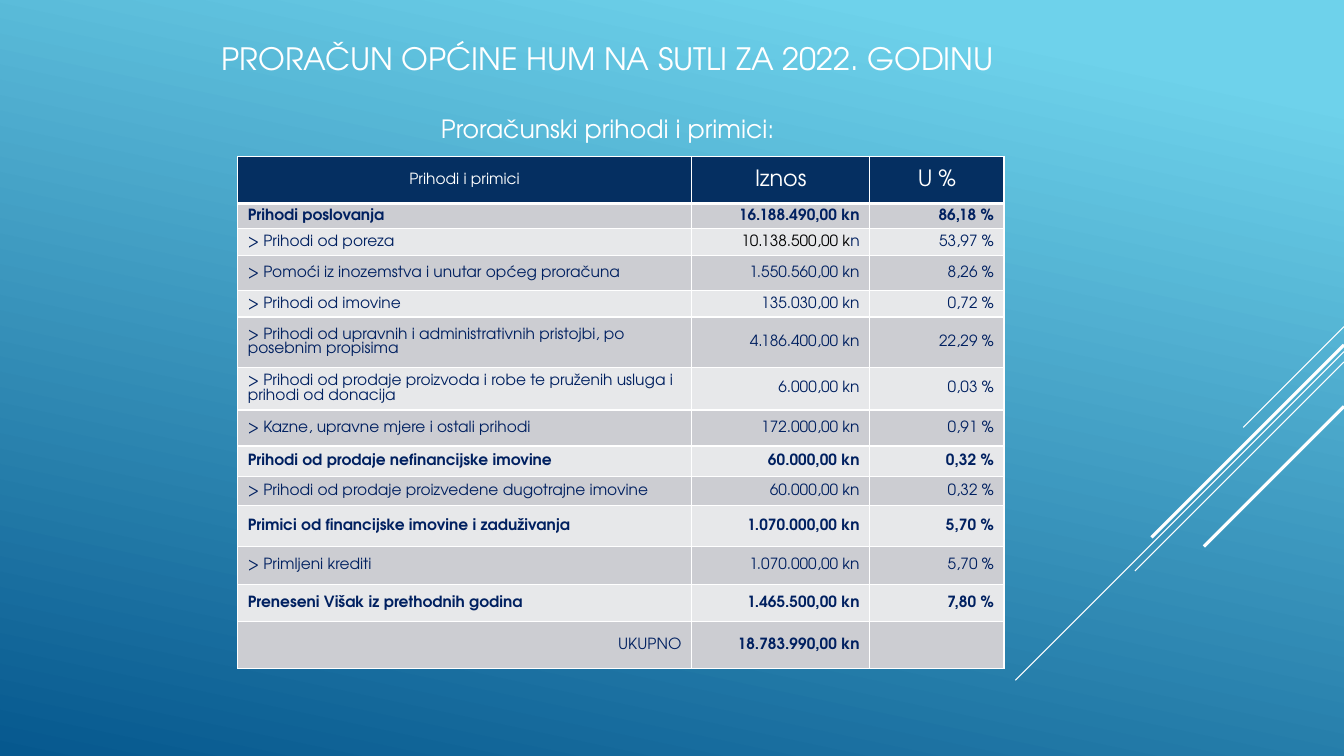
from lxml.etree import SubElement
from pptx import Presentation
from pptx.dml.color import RGBColor
from pptx.enum.shapes import MSO_CONNECTOR
from pptx.enum.text import MSO_ANCHOR, MSO_AUTO_SIZE, PP_ALIGN
from pptx.oxml.ns import qn
from pptx.util import Cm, Pt

FONT = "TeX Gyre Adventor"
WHITE = RGBColor(0xFF, 0xFF, 0xFF)
BLACK = RGBColor(0x00, 0x00, 0x00)
SKY = RGBColor(0x6E, 0xD2, 0xEB)
OCEAN = RGBColor(0x06, 0x58, 0x8E)
HEADER = RGBColor(0x05, 0x2F, 0x61)
INK = RGBColor(0x00, 0x20, 0x60)
BANDS = RGBColor(0xCC, 0xCD, 0xD2), RGBColor(0xE7, 0xE8, 0xEA)

WIDTH, HEIGHT = 33.87, 19.05
# Diagonals from the right edge: top, horizontal run (cm), line width (pt)
DIAGONALS = [(8.23, 2.54, 0.75), (8.86, 8.28, 0.75), (9.12, 5.27, 0.75),
             (8.69, 4.85, 2.25), (10.24, 3.53, 2.25)]

COLUMNS = [11.44, 4.49, 3.38]
HEADINGS = [("Prihodi i primici", 11), ("Iznos", 16), ("U %", 16)]
HEADER_HEIGHT = 1.19
# Label, amount, share, row height (cm)
ROWS = [
    ("Prihodi poslovanja", "16.188.490,00 kn", "86,18 %", 0.62),
    ("> Prihodi od poreza", "10.138.500,00 kn", "53,97 %", 0.69),
    ("> Pomoći iz inozemstva i unutar općeg proračuna", "1.550.560,00 kn", "8,26 %", 0.89),
    ("> Prihodi od imovine", "135.030,00 kn", "0,72 %", 0.66),
    ("> Prihodi od upravnih i administrativnih pristojbi, po posebnim propisima",
     "4.186.400,00 kn", "22,29 %", 1.27),
    ("> Prihodi od prodaje proizvoda i robe te pruženih usluga i prihodi od donacija",
     "6.000,00 kn", "0,03 %", 1.07),
    ("> Kazne, upravne mjere i ostali prihodi", "172.000,00 kn", "0,91 %", 0.91),
    ("Prihodi od prodaje nefinancijske imovine", "60.000,00 kn", "0,32 %", 0.76),
    ("> Prihodi od prodaje proizvedene dugotrajne imovine", "60.000,00 kn", "0,32 %", 0.74),
    ("Primici od financijske imovine i zaduživanja", "1.070.000,00 kn", "5,70 %", 1.04),
    ("> Primljeni krediti", "1.070.000,00 kn", "5,70 %", 0.94),
    ("Preneseni Višak iz prethodnih godina", "1.465.500,00 kn", "7,80 %", 0.94),
    ("UKUPNO", "18.783.990,00 kn", "", 1.19),
]


def style(p, size, color, align, bold=False):
    p.alignment = align
    p.line_spacing = 1.0
    p.font.name = FONT
    p.font.size = Pt(size)
    p.font.bold = bold
    p.font.color.rgb = color


def set_background(s):
    fill = s.background.fill
    fill.gradient()
    fill.gradient_angle = 258
    for stop, position, color in zip(fill.gradient_stops, (0.1, 1), (SKY, OCEAN)):
        stop.position = position
        stop.color.rgb = color


def add_diagonal(s, top, run, weight):
    line = s.shapes.add_connector(MSO_CONNECTOR.STRAIGHT, Cm(WIDTH), Cm(top),
                                  Cm(WIDTH - run), Cm(top + run))
    line.line.color.rgb = WHITE
    line.line.width = Pt(weight)
    SubElement(line._element.spPr, qn("a:effectLst"))


def set_title(s):
    title = s.shapes.title
    title.left, title.top, title.width, title.height = Cm(1.88), Cm(0.41), Cm(26.87), Cm(3.81)
    tf = title.text_frame
    tf.word_wrap = True
    tf.auto_size = MSO_AUTO_SIZE.NONE
    tf.vertical_anchor = MSO_ANCHOR.MIDDLE
    tf.text = "PRORAČUN OPĆINE HUM NA SUTLI ZA 2022. GODINU\nProračunski prihodi i primici:"
    for p, size in zip(tf.paragraphs, (22, 18)):
        style(p, size, WHITE, PP_ALIGN.CENTER)
    tf.paragraphs[1].space_before = Pt(26)


def set_borders(cell, bottom):
    tcPr = cell._tc.get_or_add_tcPr()
    for i, (side, weight) in enumerate((("L", 1), ("R", 1), ("T", 1), ("B", bottom))):
        ln = tcPr.makeelement(qn(f"a:ln{side}"), {"w": str(Pt(weight))})
        color = SubElement(SubElement(ln, qn("a:solidFill")), qn("a:srgbClr"))
        color.set("val", str(WHITE))
        tcPr.insert(i, ln)


def fill_cell(cell, text, fill, size, color, align, bold=False, bottom=1):
    cell.fill.solid()
    cell.fill.fore_color.rgb = fill
    cell.vertical_anchor = MSO_ANCHOR.MIDDLE
    cell.text = text
    style(cell.text_frame.paragraphs[0], size, color, align, bold)
    set_borders(cell, bottom)


def add_budget_table(s):
    frame = s.shapes.add_table(len(ROWS) + 1, len(COLUMNS), Cm(5.99), Cm(3.94),
                               Cm(sum(COLUMNS)), Cm(HEADER_HEIGHT + sum(r[-1] for r in ROWS)))
    table = frame.table
    for column, width in zip(table.columns, COLUMNS):
        column.width = Cm(width)

    # Header
    table.rows[0].height = Cm(HEADER_HEIGHT)
    for c, (text, size) in enumerate(HEADINGS):
        fill_cell(table.cell(0, c), text, HEADER, size, WHITE, PP_ALIGN.CENTER, bottom=3)

    # Body: groups are bold, their items start with ">"
    for r, (*texts, height) in enumerate(ROWS, 1):
        table.rows[r].height = Cm(height)
        total = r == len(ROWS)
        group = not texts[0].startswith(">")
        for c, text in enumerate(texts):
            align = PP_ALIGN.RIGHT if c or total else PP_ALIGN.LEFT
            bold = group and not (total and c == 0)
            fill_cell(table.cell(r, c), text, BANDS[(r - 1) % 2], 11, INK, align, bold)
    for c in range(len(COLUMNS)):
        table.cell(1, c).vertical_anchor = MSO_ANCHOR.TOP

    # The tax amount is black up to its last letter
    p = table.cell(2, 1).text_frame.paragraphs[0]
    amount = p.runs[0].text
    p.runs[0].text = amount[:-1]
    p.runs[0].font.color.rgb = BLACK
    p.add_run().text = amount[-1]


def main():
    prs = Presentation()
    prs.slide_width, prs.slide_height = Cm(WIDTH), Cm(HEIGHT)
    s = prs.slides.add_slide(prs.slide_layouts[5])
    set_background(s)
    for diagonal in DIAGONALS:
        add_diagonal(s, *diagonal)
    set_title(s)
    add_budget_table(s)
    prs.save("out.pptx")


if __name__ == "__main__":
    main()
